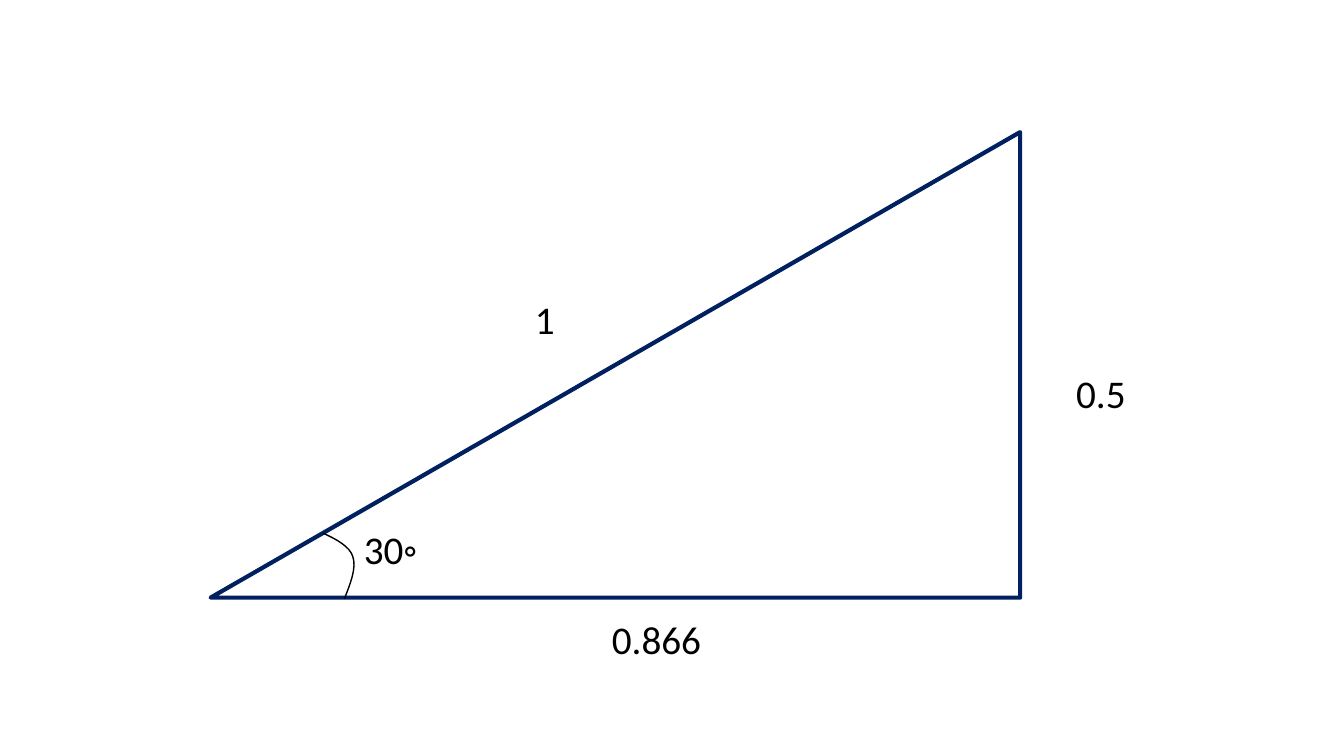
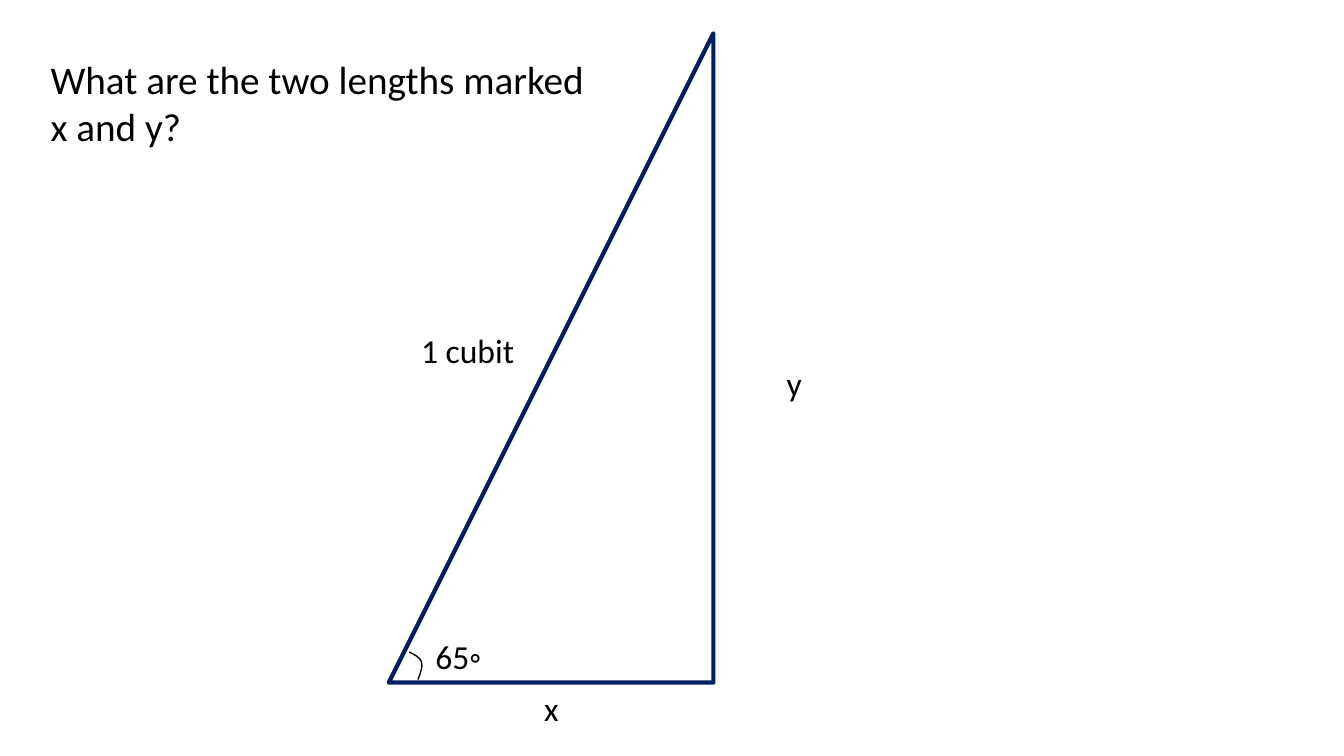
from dataclasses import dataclass

from lxml import etree
from pptx import Presentation
from pptx import util as u
from pptx.dml.color import RGBColor
from pptx.enum import shapes, text
from pptx.oxml.ns import qn
from pptx.shapes.group import GroupShape
from pptx.slide import Slide
from pptx.text.text import TextFrame

NAVY = RGBColor(0x00, 0x20, 0x60)
BLACK = RGBColor(0x00, 0x00, 0x00)
FONT = "Calibri"
LEFT, CENTER = text.PP_ALIGN.LEFT, text.PP_ALIGN.CENTER
TITLE_ONLY, BLANK = 5, 6

# Start point, then two cubic curves of three points each, in centimetres
ARC_POINTS = [(0, 0), (0.33, 0.15), (0.66, 0.33), (0.74, 0.58),
              (0.84, 0.86), (0.69, 1.24), (0.53, 1.65)]


@dataclass(frozen=True)
class Box:
    left: float
    top: float
    width: float
    height: float

    def lengths(self) -> list[u.Length]:
        return [u.Cm(value) for value in (self.left, self.top, self.width, self.height)]


@dataclass(frozen=True)
class Label:
    words: str
    box: Box
    align: text.PP_ALIGN = CENTER


@dataclass(frozen=True)
class Figure:
    triangle: Box
    arc_left: float
    arc_top: float
    arc_scale: float
    font_size: int
    labels: tuple[Label, ...]


SOLVED = Figure(
    Box(5.31, 3.33, 20.4, 11.73), 8.15, 13.44, 1, 28,
    (Label("30◦", Box(8.92, 13.11, 4.42, 1.96), LEFT),
     Label("1", Box(12.55, 7.32, 2.36, 1.96)),
     Label("0.5", Box(25.7, 9.19, 4.09, 1.96)),
     Label("0.866", Box(14.5, 15.39, 4.09, 1.96))),
)
EXERCISE = Figure(
    Box(9.8, 0.84, 8.18, 16.36), 10.31, 16.43, 0.42, 24,
    (Label("65◦", Box(10.72, 15.9, 1.9, 1.27), LEFT),
     Label("1 cubit", Box(9.45, 8.2, 4.67, 1.27)),
     Label("y", Box(17.68, 9.02, 4.67, 1.27)),
     Label("x", Box(11.56, 17.22, 4.67, 1.27))),
)


def write(frame: TextFrame, words: str, size: int, align: text.PP_ALIGN) -> None:
    frame.text = words
    frame.word_wrap = True
    frame.auto_size = text.MSO_AUTO_SIZE.SHAPE_TO_FIT_TEXT
    frame.vertical_anchor = text.MSO_ANCHOR.TOP
    para = frame.paragraphs[0]
    para.alignment = align
    for span in para.runs:
        span.font.name = FONT
        span.font.size = u.Pt(size)
        span.font.color.rgb = BLACK


def draw_triangle(group: GroupShape, box: Box) -> None:
    triangle = group.shapes.add_shape(shapes.MSO_SHAPE.RIGHT_TRIANGLE, *box.lengths())
    triangle.element.spPr.xfrm.set("flipH", "1")
    triangle.shadow.inherit = False
    triangle.fill.background()
    triangle.line.color.rgb = NAVY
    triangle.line.width = u.Pt(3)


def draw_arc(group: GroupShape, left: float, top: float, scale: float) -> None:
    """Draw the angle mark, turning its polyline into two cubic curves."""
    points = [(u.Cm(left + x * scale), u.Cm(top + y * scale)) for x, y in ARC_POINTS]
    builder = group.shapes.build_freeform(*points[0])
    builder.add_line_segments(points[1:], close=False)
    arc = builder.convert_to_shape()
    segments = list(arc.element.iter(qn("a:lnTo")))
    outline = segments[0].getparent()
    for first in range(0, len(segments), 3):
        curve = etree.SubElement(outline, qn("a:cubicBezTo"))
        for segment in segments[first:first + 3]:
            curve.append(segment[0])
            outline.remove(segment)
    arc.shadow.inherit = False
    arc.fill.background()
    arc.line.color.rgb = BLACK
    arc.line.width = u.Pt(1)


def draw_figure(page: Slide, figure: Figure) -> None:
    group = page.shapes.add_group_shape()
    draw_triangle(group, figure.triangle)
    draw_arc(group, figure.arc_left, figure.arc_top, figure.arc_scale)
    for label in figure.labels:
        box = group.shapes.add_textbox(*label.box.lengths())
        write(box.text_frame, label.words, figure.font_size, label.align)


def set_question(page: Slide, words: str, box: Box) -> None:
    title = page.shapes.title
    title.left, title.top, title.width, title.height = box.lengths()
    write(title.text_frame, words, 28, LEFT)


def main() -> None:
    deck = Presentation()
    deck.slide_width, deck.slide_height = u.Cm(33.87), u.Cm(19.05)

    page = deck.slides.add_slide(deck.slide_layouts[BLANK])
    draw_figure(page, SOLVED)

    page = deck.slides.add_slide(deck.slide_layouts[TITLE_ONLY])
    draw_figure(page, EXERCISE)
    set_question(page, "What are the two lengths marked x and y?",
                 Box(1.02, 1.27, 14.15, 2.64))

    deck.save("out.pptx")


if __name__ == "__main__":
    main()
